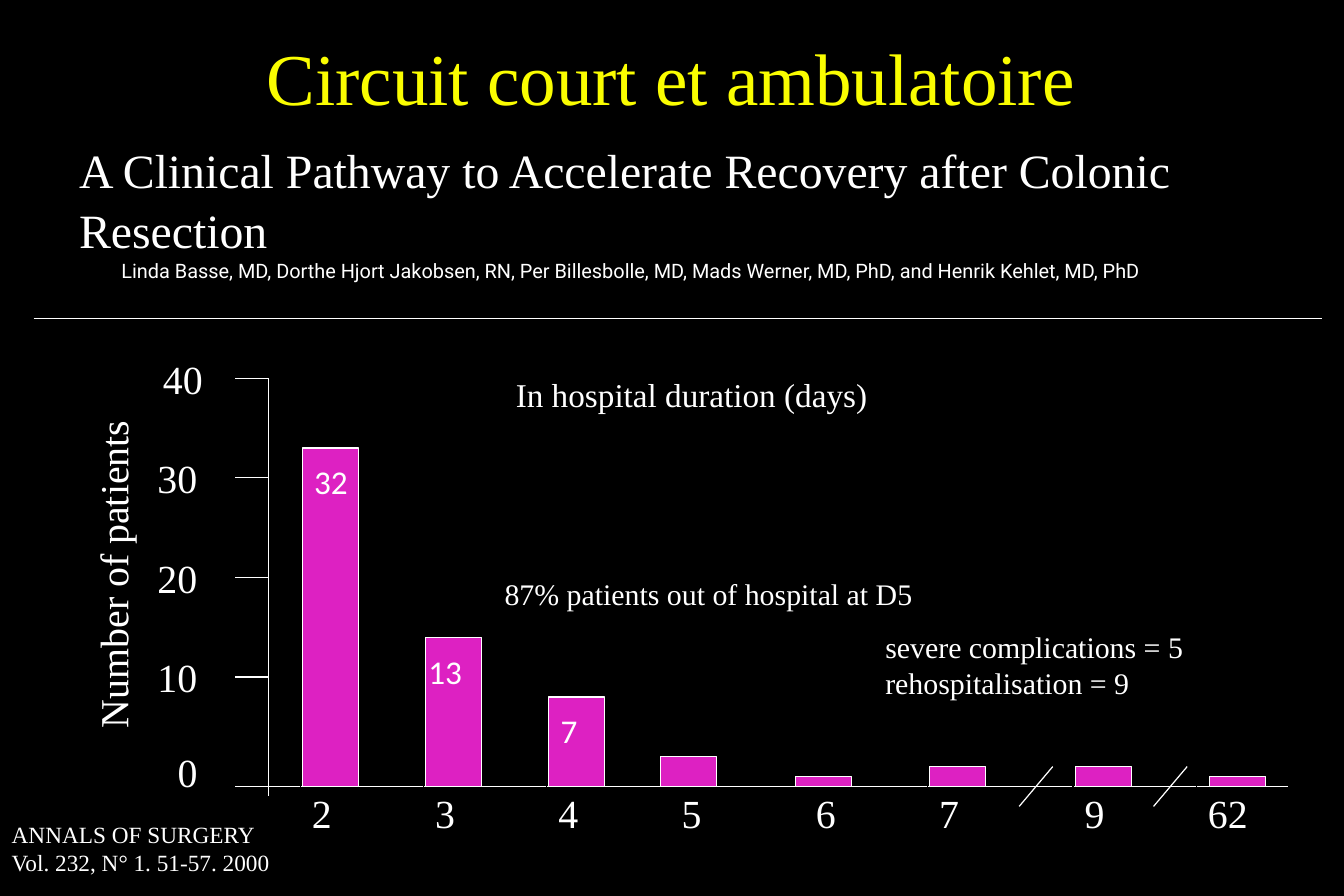
from collections import namedtuple

from lxml.etree import SubElement
from pptx import Presentation
from pptx.dml.color import RGBColor
from pptx.enum.shapes import MSO_CONNECTOR, MSO_SHAPE
from pptx.enum.text import MSO_ANCHOR, MSO_AUTO_SIZE, PP_ALIGN
from pptx.oxml.ns import qn
from pptx.util import Inches, Pt

WIDTH, HEIGHT = 11.25, 7.5
COLUMNS, ROWS = 120, 90  # one row is one patient on the chart's scale
COLORS = {"ground": "000000", "text": "FFFFFF", "title": "FAFD00", "bar": "DD21C2"}
SERIF = "Times New Roman"

Area = namedtuple("Area", "left top width height")
Bar = namedtuple("Bar", "day day_left left rows count count_left")

BARS = [
    Bar("2", 16.8, 17, 34, "32", 17),
    Bar("3", 27.8, 28, 15, "13", 27.2),
    Bar("4", 38.8, 39, 9, "7", 39),
    Bar("5", 49.8, 49, 3, "", 0),
    Bar("6", 61.8, 61, 1, "", 0),
    Bar("7", 72.8, 73, 2, "", 0),
    Bar("9", 85.8, 86, 2, "", 0),
    Bar("62", 96.8, 98, 1, "", 0),
]


def color(name):
    return RGBColor.from_string(COLORS[name])


def across(columns):
    return Inches(columns * WIDTH / COLUMNS)


def down(rows):
    return Inches(rows * HEIGHT / ROWS)


def inside(area, left, top, width, height):
    """Frame of a part whose grid place is counted from the area's corner."""
    return (across(area.left + left), down(area.top + top),
            across(width), down(height))


def set_values(target, **values):
    for name, value in values.items():
        setattr(target, name, value)


def write(shape, lines, size, font=SERIF, ink="text", align=PP_ALIGN.LEFT,
          spacing=None, **frame_values):
    frame = shape.text_frame
    set_values(frame, **frame_values)
    for number, line in enumerate(lines):
        para = frame.add_paragraph() if number else frame.paragraphs[0]
        set_values(para, alignment=align, line_spacing=spacing)
        span = para.add_run()
        set_values(span, text=line)
        set_values(span.font, name=font, size=Pt(size))
        span.font.color.rgb = color(ink)


def add_label(page, frame, lines, size, font=SERIF, outline=True):
    box = page.shapes.add_textbox(*frame)
    if outline:
        box.line.color.rgb = color("ground")
        box.line.width = Pt(0.75)
    write(box, lines, size, font, word_wrap=False,
          auto_size=MSO_AUTO_SIZE.SHAPE_TO_FIT_TEXT)
    return box


def add_line(page, area, start, end):
    line = page.shapes.add_connector(
        MSO_CONNECTOR.STRAIGHT,
        across(area.left + start[0]), down(area.top + start[1]),
        across(area.left + end[0]), down(area.top + end[1]))
    line.line.color.rgb = color("text")
    line.line.width = Pt(0.75)
    SubElement(line._element.spPr, qn("a:effectLst"))


def add_header(page, area):
    heading = page.shapes.title
    left, top, width, height = inside(area, 6, 17.5, 108, 4.8)
    set_values(heading, left=left, top=top, width=width, height=height)
    write(heading, ["A Clinical Pathway to Accelerate Recovery after Colonic Resection"],
          28.8, spacing=1.05, word_wrap=True, auto_size=MSO_AUTO_SIZE.NONE,
          vertical_anchor=MSO_ANCHOR.MIDDLE)
    topic = page.shapes.add_textbox(*inside(area, 14.8, 0.7, 90.3, 14))
    write(topic, ["Circuit court et ambulatoire"], 44, ink="title",
          align=PP_ALIGN.CENTER, word_wrap=True,
          vertical_anchor=MSO_ANCHOR.MIDDLE)
    add_label(page, inside(area, 9.8, 25.4, 97.9, 3.6),
              ["Linda Basse, MD, Dorthe Hjort Jakobsen, RN, Per Billesbolle, MD, "
               "Mads Werner, MD, PhD, and Henrik Kehlet, MD, PhD"], 12, "Roboto")
    add_line(page, area, (3, area.height), (118, area.height))


def add_axes(page, area, axis, base):
    add_line(page, area, (axis, base - 41), (axis, base + 1))
    add_line(page, area, (axis - 3, base), (axis + 91, base))
    for right in (84, 96):
        add_line(page, area, (right, base - 2), (right - 3, base + 2))
    for value in (10, 20, 30, 40):
        row = base - 1 - value
        add_line(page, area, (axis - 3, row), (axis, row))
        left = 3.5 if value == 40 else 3
        add_label(page, inside(area, left, row - 3, 5.8, 6.1), [str(value)], 24)
    add_label(page, inside(area, 4.8, base - 4.5, 3.9, 6.1), ["0"], 24)
    name = add_label(page, inside(area, -14.9, 20.5, 29.9, 6),
                     ["Number of patients"], 24)
    name.rotation = 270


def add_bars(page, area, base):
    for bar in BARS:
        day_width = 5.8 if len(bar.day) > 1 else 3.9
        add_label(page, inside(area, bar.day_left, base - 0.4, day_width, 6.1),
                  [bar.day], 24)
    for bar in BARS:
        top = base - bar.rows
        column = page.shapes.add_shape(
            MSO_SHAPE.RECTANGLE, *inside(area, bar.left, top, 5, bar.rows))
        column.shadow.inherit = False
        column.fill.solid()
        column.fill.fore_color.rgb = color("bar")
        column.line.color.rgb = color("text")
        column.line.width = Pt(0.75)
        if bar.count:
            count_width = 5.2 if len(bar.count) > 1 else 3.7
            add_label(page, inside(area, bar.count_left, top + 0.8, count_width, 5.3),
                      [bar.count], 20, "Calibri", outline=False)


def add_stay_chart(page, area):
    axis, base = 14, 45
    add_axes(page, area, axis, base)
    add_bars(page, area, base)
    add_label(page, inside(area, 35, 3, 33.8, 5.3), ["In hospital duration (days)"], 20)
    add_label(page, inside(area, 68, 28.6, 29, 8.5),
              ["severe complications = 5", "rehospitalisation = 9"], 18)
    add_label(page, inside(area, 34, 23.2, 38.9, 4.8),
              ["87% patients out of hospital at D5"], 18)


def add_reference(page, area):
    add_label(page, inside(area, 0, 0, area.width, area.height),
              ["ANNALS OF SURGERY", "Vol. 232, N° 1. 51-57. 2000"], 14)


def main():
    deck = Presentation()
    set_values(deck, slide_width=Inches(WIDTH), slide_height=Inches(HEIGHT))
    page = deck.slides.add_slide(deck.slide_layouts.get_by_name("Title Only"))
    page.background.fill.solid()
    page.background.fill.fore_color.rgb = color("ground")
    add_header(page, Area(0, 0, COLUMNS, 32))
    add_reference(page, Area(0, 81.8, 25.5, 6.8))
    add_stay_chart(page, Area(10, 34, 108, 50))
    deck.save("out.pptx")


if __name__ == "__main__":
    main()
